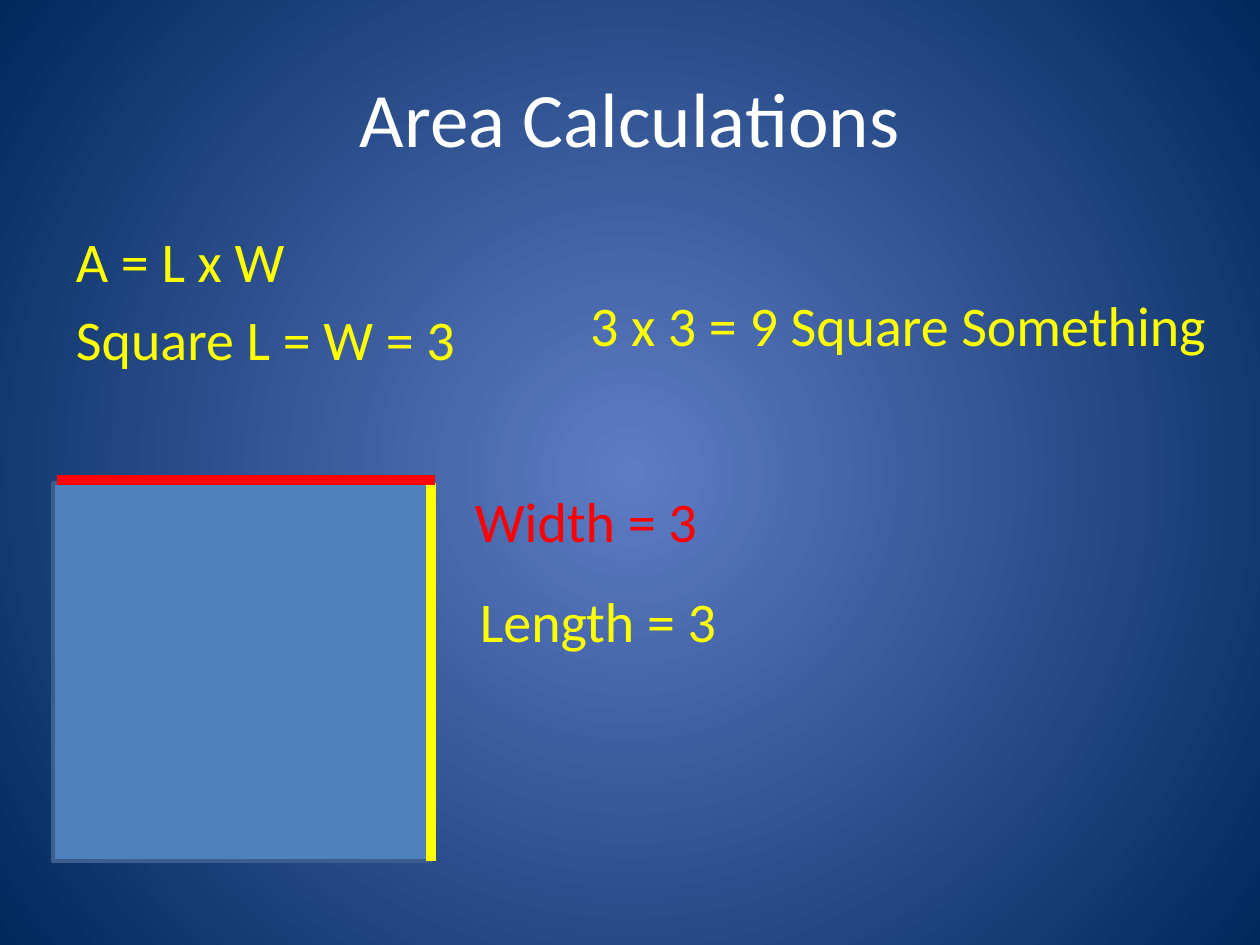
from dataclasses import dataclass

from lxml.etree import SubElement
from pptx import Presentation
from pptx.dml.color import RGBColor
from pptx.enum.shapes import MSO_CONNECTOR, MSO_SHAPE
from pptx.enum.text import MSO_ANCHOR, MSO_AUTO_SIZE, PP_ALIGN
from pptx.oxml.ns import qn
from pptx.util import Emu, Pt

PX_PER_INCH = 126


@dataclass(frozen=True)
class Theme:
    font: str = "Calibri"
    title_size: int = 44
    text_size: int = 32
    white: str = "FFFFFF"
    yellow: str = "FFFF00"
    red: str = "FF0000"
    square_fill: str = "4F81BD"
    square_line: str = "3A5F8C"
    glow: str = "5E7CC5"
    navy: str = "00295C"


@dataclass(frozen=True)
class Box:
    left: int
    top: int
    width: int
    height: int


@dataclass(frozen=True)
class Label:
    box: Box
    lines: tuple[str, ...]
    color: str
    wrap: bool = False
    inset: int = 13


@dataclass(frozen=True)
class Side:
    start: tuple[int, int]
    end: tuple[int, int]
    color: str


THEME = Theme()
TITLE_BOX = Box(63, 38, 1134, 158)
SQUARE = Box(53, 483, 378, 378)
RIGHT, BOTTOM = SQUARE.left + SQUARE.width, SQUARE.top + SQUARE.height

LABELS = (
    Label(Box(63, 220, 1134, 624), ("A = L x W", "Square L = W = 3"), THEME.yellow, wrap=True),
    Label(Box(442, 580, 290, 81), ("Length = 3",), THEME.yellow, inset=38),
    Label(Box(462, 480, 249, 81), ("Width = 3",), THEME.red),
    Label(Box(577, 284, 662, 81), ("3 x 3 = 9 Square Something",), THEME.yellow),
)
SIDES = (
    Side((RIGHT, SQUARE.top), (RIGHT, BOTTOM), THEME.yellow),
    Side((435, 480), (57, 480), THEME.red),
)


def px(length: int) -> Emu:
    return Emu(round(length * 914400 / PX_PER_INCH))


def placed(box: Box) -> tuple[Emu, ...]:
    return px(box.left), px(box.top), px(box.width), px(box.height)


def apply(target, **values) -> None:
    for attribute, value in values.items():
        setattr(target, attribute, value)


def format_font(font, size: int, color: str) -> None:
    apply(font, name=THEME.font, size=Pt(size))
    font.color.rgb = RGBColor.from_string(color)


def paint_background(slide) -> None:
    """Fill the slide with a circular gradient, light in the middle."""
    fill = slide.background.fill
    fill.gradient()
    for stop, color in zip(fill.gradient_stops, (THEME.glow, THEME.navy)):
        stop.color.rgb = RGBColor.from_string(color)
    gradient = slide.background._cSld.find(".//" + qn("a:gradFill"))
    linear = gradient.find(qn("a:lin"))
    if linear is not None:
        gradient.remove(linear)
    circle = SubElement(gradient, qn("a:path"), {"path": "circle"})
    SubElement(circle, qn("a:fillToRect"), dict.fromkeys("ltrb", "50000"))


def set_title(slide, wording: str) -> None:
    title = slide.shapes.title
    left, top, width, height = placed(TITLE_BOX)
    apply(title, left=left, top=top, width=width, height=height)
    title.text_frame.text = wording
    title.text_frame.vertical_anchor = MSO_ANCHOR.MIDDLE
    heading = title.text_frame.paragraphs[0]
    heading.alignment = PP_ALIGN.CENTER
    format_font(heading.runs[0].font, THEME.title_size, THEME.white)


def draw_square(slide) -> None:
    square = slide.shapes.add_shape(MSO_SHAPE.RECTANGLE, *placed(SQUARE))
    square.shadow.inherit = False
    square.fill.solid()
    square.fill.fore_color.rgb = RGBColor.from_string(THEME.square_fill)
    square.line.color.rgb = RGBColor.from_string(THEME.square_line)
    square.line.width = Pt(2)


def draw_label(slide, label: Label) -> None:
    frame = slide.shapes.add_textbox(*placed(label.box)).text_frame
    fit = MSO_AUTO_SIZE.NONE if label.wrap else MSO_AUTO_SIZE.SHAPE_TO_FIT_TEXT
    apply(frame, text="\n".join(label.lines), word_wrap=label.wrap,
          auto_size=fit, margin_left=px(label.inset))
    for paragraph in frame.paragraphs:
        if label.wrap:
            paragraph.space_before = Pt(THEME.text_size * 0.2)
        format_font(paragraph.runs[0].font, THEME.text_size, label.color)


def draw_side(slide, side: Side) -> None:
    ends = map(px, side.start + side.end)
    line = slide.shapes.add_connector(MSO_CONNECTOR.STRAIGHT, *ends)
    line.line.color.rgb = RGBColor.from_string(side.color)
    line.line.width = Pt(6)
    SubElement(line._element.spPr, qn("a:effectLst"))


def main() -> None:
    deck = Presentation()
    apply(deck, slide_width=px(1260), slide_height=px(945))
    slide = deck.slides.add_slide(deck.slide_layouts.get_by_name("Title Only"))
    paint_background(slide)
    set_title(slide, "Area Calculations")
    draw_square(slide)
    for side in SIDES:
        draw_side(slide, side)
    for label in LABELS:
        draw_label(slide, label)
    deck.save("out.pptx")


if __name__ == "__main__":
    main()
